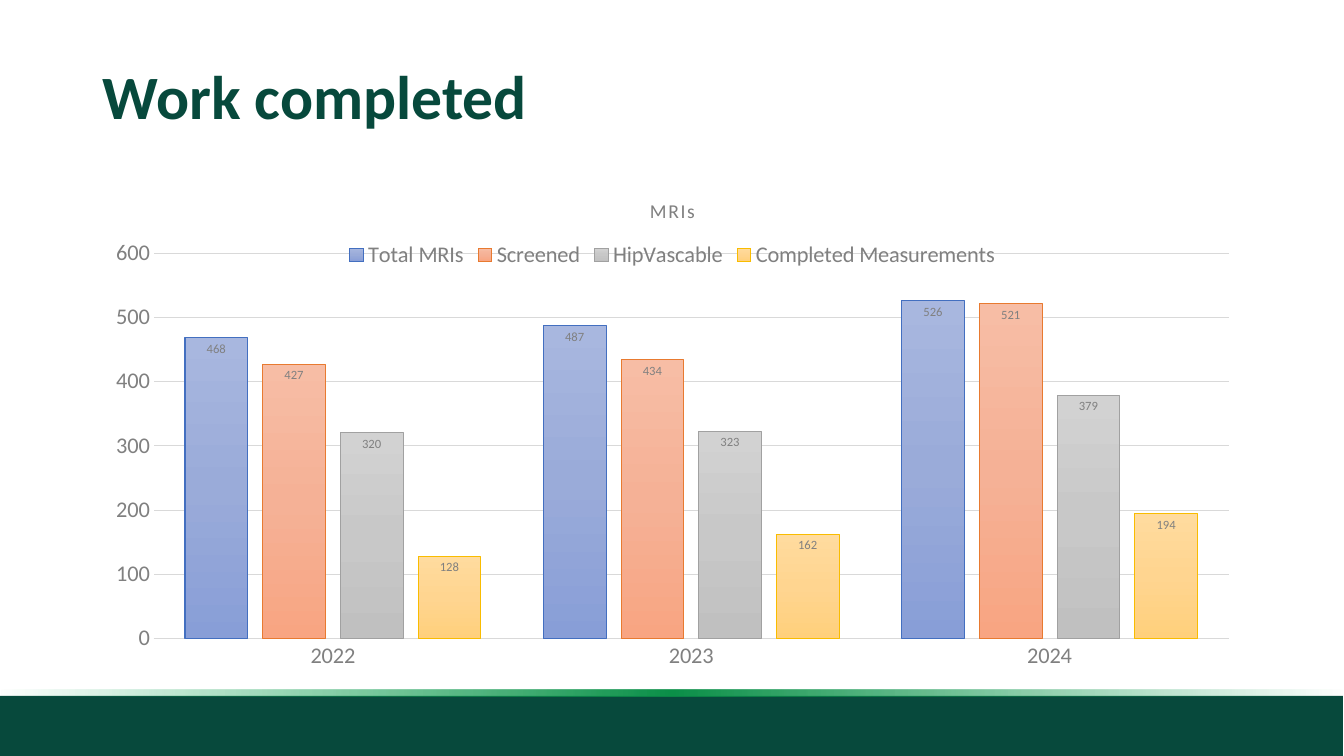
"""Builds the Work completed slide with its yearly MRI chart."""
import pptx
import pptx.chart.data
import pptx.dml.color
import pptx.enum.chart
import pptx.enum.shapes
import pptx.enum.text
import pptx.oxml
import pptx.oxml.ns
import pptx.util

SCALE = 914400 / 100.8
THEME = {
    "font": "Calibri", "green": "07493C", "gray": "808080", "rule": "D9D9D9",
    "head": 44, "title": 14, "axis": 16, "label": 9, "line": 0.75,
    "glow": [(0, "0D9D4F", 0), (50, "0C9049", 100), (100, "0FAB56", 0)],
}
SERIES = [
    ("Total MRIs", (468, 487, 526), ("A8B7DF", "9AABD9", "889ED7"), "436FC0"),
    ("Screened", (427, 434, 521), ("F7BDA5", "F5B196", "F8A582"), "E87A30"),
    ("HipVascable", (320, 323, 379), ("D2D2D2", "C8C8C8", "C0C0C0"), "A1A1A1"),
    ("Completed Measurements", (128, 162, 194),
     ("FFDB9E", "FFD590", "FFD07C"), "F9BC00"),
]
RGB = pptx.dml.color.RGBColor.from_string
Pt = pptx.util.Pt


def place(*sides):
    return [pptx.util.Emu(round(side * SCALE)) for side in sides]


def shade(fill, stops, angle):
    fill.gradient()
    grad = fill._xPr.find(pptx.oxml.ns.qn("a:gradFill"))
    marks = "".join(
        f'<a:gs pos="{pos * 1000}"><a:srgbClr val="{color}">'
        f'<a:alpha val="{alpha * 1000}"/></a:srgbClr></a:gs>'
        for pos, color, alpha in stops)
    fresh = pptx.oxml.parse_xml(
        f'<a:gradFill {pptx.oxml.ns.nsdecls("a")} rotWithShape="1">'
        f'<a:gsLst>{marks}</a:gsLst>'
        f'<a:lin ang="{angle * 60000}" scaled="0"/></a:gradFill>')
    grad.getparent().replace(grad, fresh)


deck = pptx.Presentation()
deck.slide_width, deck.slide_height = place(1344, 756)
slide = deck.slides.add_slide(deck.slide_layouts[6])

rect = pptx.enum.shapes.MSO_SHAPE.RECTANGLE
band = slide.shapes.add_shape(rect, *place(0, 696, 1343, 60))
band.fill.solid()
band.fill.fore_color.rgb = RGB(THEME["green"])
strip = slide.shapes.add_shape(rect, *place(0, 690, 1344, 6))
shade(strip.fill, THEME["glow"], 180)
for bar in (band, strip):
    bar.shadow.inherit = False
    bar.line.fill.background()

frame = slide.shapes.add_textbox(*place(93, 40, 1159, 120)).text_frame
frame.word_wrap = True
frame.vertical_anchor = pptx.enum.text.MSO_ANCHOR.MIDDLE
para = frame.paragraphs[0]
para.line_spacing = 0.9
head = para.add_run()
head.text = "Work completed"
head.font.bold = True

data = pptx.chart.data.CategoryChartData()
data.categories = ["2022", "2023", "2024"]
for name, values, tints, edge in SERIES:
    data.add_series(name, values)
kind = pptx.enum.chart.XL_CHART_TYPE.COLUMN_CLUSTERED
chart = slide.shapes.add_chart(kind, *place(93, 178, 1159, 502), data).chart

chart.has_title = True
title = chart.chart_title.text_frame.paragraphs[0].add_run()
title.text = "MRIs"
title.font.bold = False
title.font._element.set("spc", "100")
chart.chart_title.include_in_layout = False

chart.has_legend = True
legend = chart.legend
legend.position = pptx.enum.chart.XL_LEGEND_POSITION.TOP
legend.include_in_layout = True

years, counts = chart.category_axis, chart.value_axis
counts.minimum_scale, counts.maximum_scale, counts.major_unit = 0, 600, 100
for axis in (years, counts):
    axis.major_tick_mark = pptx.enum.chart.XL_TICK_MARK.NONE
    axis.minor_tick_mark = pptx.enum.chart.XL_TICK_MARK.NONE
counts.format.line.fill.background()
for line in (years.format.line, counts.major_gridlines.format.line):
    line.color.rgb = RGB(THEME["rule"])
    line.width = Pt(THEME["line"])

plot = chart.plots[0]
plot.gap_width, plot.overlap = 100, -24
plot.vary_by_categories = False
fonts = [
    (head.font, "head", "green"), (chart.font, "axis", "gray"),
    (title.font, "title", "gray"), (legend.font, "axis", "gray"),
    (years.tick_labels.font, "axis", "gray"),
    (counts.tick_labels.font, "axis", "gray"),
]
for series, (name, values, tints, edge) in zip(plot.series, SERIES):
    stops = [(50 * step, tint, 100) for step, tint in enumerate(tints)]
    shade(series.format.fill, stops, 90)
    series.format.line.color.rgb = RGB(edge)
    series.format.line.width = Pt(THEME["line"])
    labels = series.data_labels
    labels.show_value = True
    labels.position = pptx.enum.chart.XL_LABEL_POSITION.INSIDE_END
    fonts.append((labels.font, "label", "gray"))

for font, size, color in fonts:
    font.name = THEME["font"]
    font.size = Pt(THEME[size])
    font.color.rgb = RGB(THEME[color])

deck.save("out.pptx")
